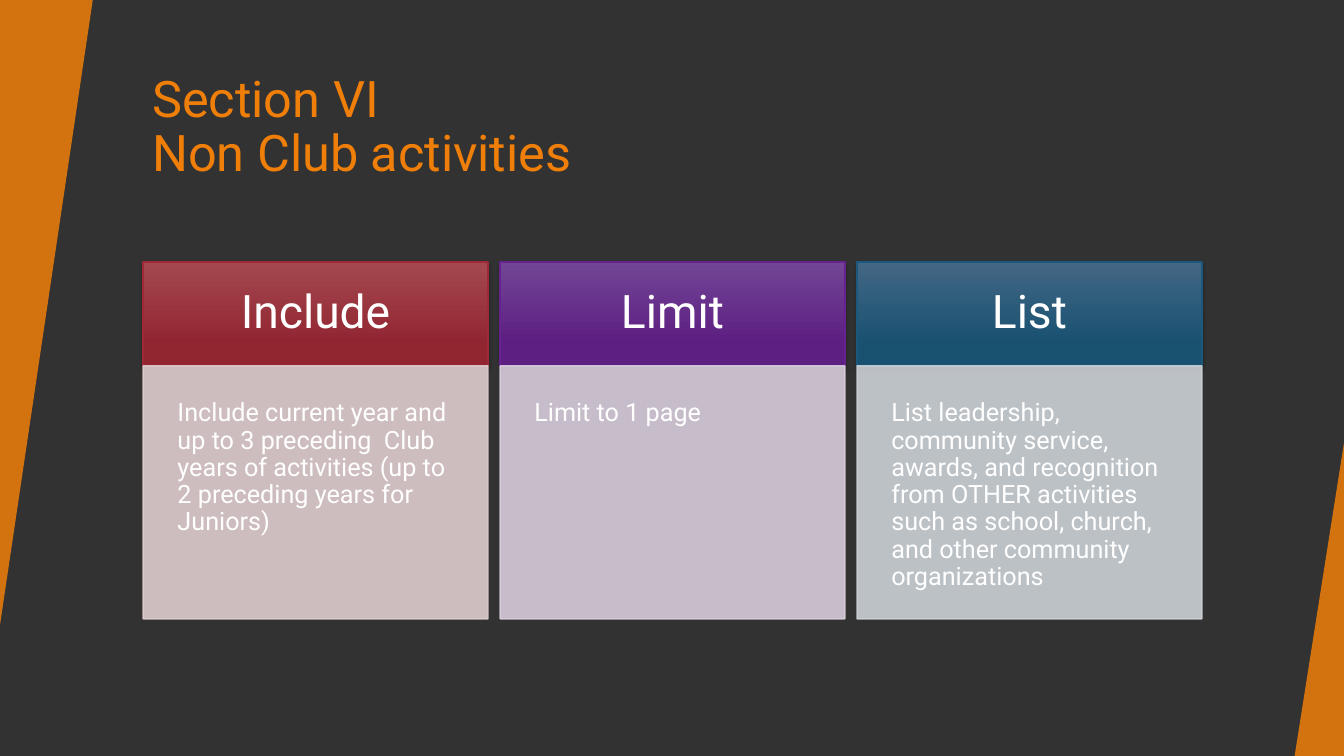
from lxml.etree import SubElement
from pptx import Presentation
from pptx.dml.color import RGBColor
from pptx.enum.shapes import MSO_SHAPE
from pptx.enum.text import MSO_ANCHOR, MSO_AUTO_SIZE, PP_ALIGN
from pptx.oxml.ns import qn
from pptx.util import Inches, Pt

FONT = "Roboto"
BACKGROUND = RGBColor(0x32, 0x32, 0x32)
ORANGE = RGBColor(0xF0, 0x7F, 0x09)
WHITE = RGBColor(0xFF, 0xFF, 0xFF)

# Each palette: gradient top, gradient bottom, header line, body
RED = [RGBColor.from_string(c) for c in ("A4484F", "912631", "9F2936", "DFCDCE")]
PURPLE = [RGBColor.from_string(c) for c in ("724595", "5D1F82", "66228E", "D8CDDB")]
BLUE = [RGBColor.from_string(c) for c in ("436785", "195171", "1B587C", "CCD1D7")]

CARDS = [
    ("Include", "Include current year and up to 3 preceding  Club years of activities "
     "(up to 2 preceding years for Juniors)", RED),
    ("Limit", "Limit to 1 page", PURPLE),
    ("List", "List leadership, community service, awards, and recognition from OTHER "
     "activities such as school, church, and other community organizations", BLUE),
]
CARD_WIDTH, CARD_STEP = 3.42, 3.54
HEADER_HEIGHT = 1.03


def set_opacity(fill, percent):
    color = fill._xPr.find(qn("a:solidFill"))[0]
    SubElement(color, qn("a:alpha"), val=str(percent * 1000))


def add_soft_shadow(shape):
    shape.shadow.inherit = False
    effects = shape._element.spPr.find(qn("a:effectLst"))
    shadow = SubElement(effects, qn("a:outerShdw"), blurRad=str(Pt(3)),
                        dist=str(Pt(2)), dir="5400000", rotWithShape="0")
    color = SubElement(shadow, qn("a:srgbClr"), val="000000")
    SubElement(color, qn("a:alpha"), val="35000")


def add_wedge(slide, left, top, width, height, rotation=0):
    """Add a translucent orange triangle with its tip over the right corner."""
    wedge = slide.shapes.add_shape(MSO_SHAPE.ISOSCELES_TRIANGLE, Inches(left), Inches(top),
                                   Inches(width), Inches(height))
    wedge.adjustments[0] = 1
    wedge.rotation = rotation
    wedge.shadow.inherit = False
    wedge.fill.solid()
    wedge.fill.fore_color.rgb = ORANGE
    set_opacity(wedge.fill, 85)
    wedge.line.fill.background()


def add_title(slide, left, top, width, height):
    title = slide.shapes.title
    title.left, title.top = Inches(left), Inches(top)
    title.width, title.height = Inches(width), Inches(height)
    frame = title.text_frame
    frame.text = "Section VI\vNon Club activities"
    frame.auto_size = MSO_AUTO_SIZE.NONE
    frame.vertical_anchor = MSO_ANCHOR.MIDDLE
    format_text(frame.paragraphs[0], 36, ORANGE, PP_ALIGN.LEFT)


def format_text(paragraph, size, color, alignment):
    paragraph.alignment = alignment
    paragraph.line_spacing = 0.9
    paragraph.font.name = FONT
    paragraph.font.size = Pt(size)
    paragraph.font.color.rgb = color


def add_panel(slide, left, top, width, height, text, size, inset, alignment, anchor):
    panel = slide.shapes.add_shape(MSO_SHAPE.RECTANGLE, Inches(left), Inches(top),
                                   Inches(width), Inches(height))
    panel.line.width = Pt(1)
    frame = panel.text_frame
    frame.word_wrap = True
    frame.vertical_anchor = anchor
    frame.margin_left = frame.margin_right = Inches(inset)
    frame.margin_top = frame.margin_bottom = Inches(inset)
    frame.text = text
    format_text(frame.paragraphs[0], size, WHITE, alignment)
    return panel


def add_card(slide, left, top, width, height, heading, details, palette):
    gradient_top, gradient_bottom, header_line, body_color = palette

    header = add_panel(slide, left, top, width, HEADER_HEIGHT, heading, 33, 0.27,
                       PP_ALIGN.CENTER, MSO_ANCHOR.MIDDLE)
    header.fill.gradient()
    header.fill.gradient_angle = 270
    first, last = header.fill.gradient_stops
    first.position, first.color.rgb = 0, gradient_top
    last.position, last.color.rgb = 0.78, gradient_bottom
    header.line.color.rgb = header_line
    add_soft_shadow(header)

    body = add_panel(slide, left, top + HEADER_HEIGHT, width, height - HEADER_HEIGHT,
                     details, 18, 0.34, PP_ALIGN.LEFT, MSO_ANCHOR.TOP)
    body.shadow.inherit = False
    body.fill.solid()
    body.fill.fore_color.rgb = body_color
    body.line.color.rgb = body_color
    set_opacity(body.fill, 90)
    set_opacity(body.line.fill, 90)


def add_cards(slide, left, top, height):
    for index, (heading, details, palette) in enumerate(CARDS):
        add_card(slide, left + index * CARD_STEP, top, CARD_WIDTH, height,
                 heading, details, palette)


def main():
    presentation = Presentation()
    presentation.slide_width = Inches(13.33)
    presentation.slide_height = Inches(7.5)
    slide = presentation.slides.add_slide(presentation.slide_layouts[5])
    slide.background.fill.solid()
    slide.background.fill.fore_color.rgb = BACKGROUND

    add_title(slide, 1.41, 0.67, 11.15, 1.2)
    add_wedge(slide, 0, 0, 0.92, 6.2, rotation=180)
    add_wedge(slide, 12.84, 4.39, 0.49, 3.11)
    add_cards(slide, 1.42, 2.6, 3.54)
    presentation.save("out.pptx")


if __name__ == "__main__":
    main()
